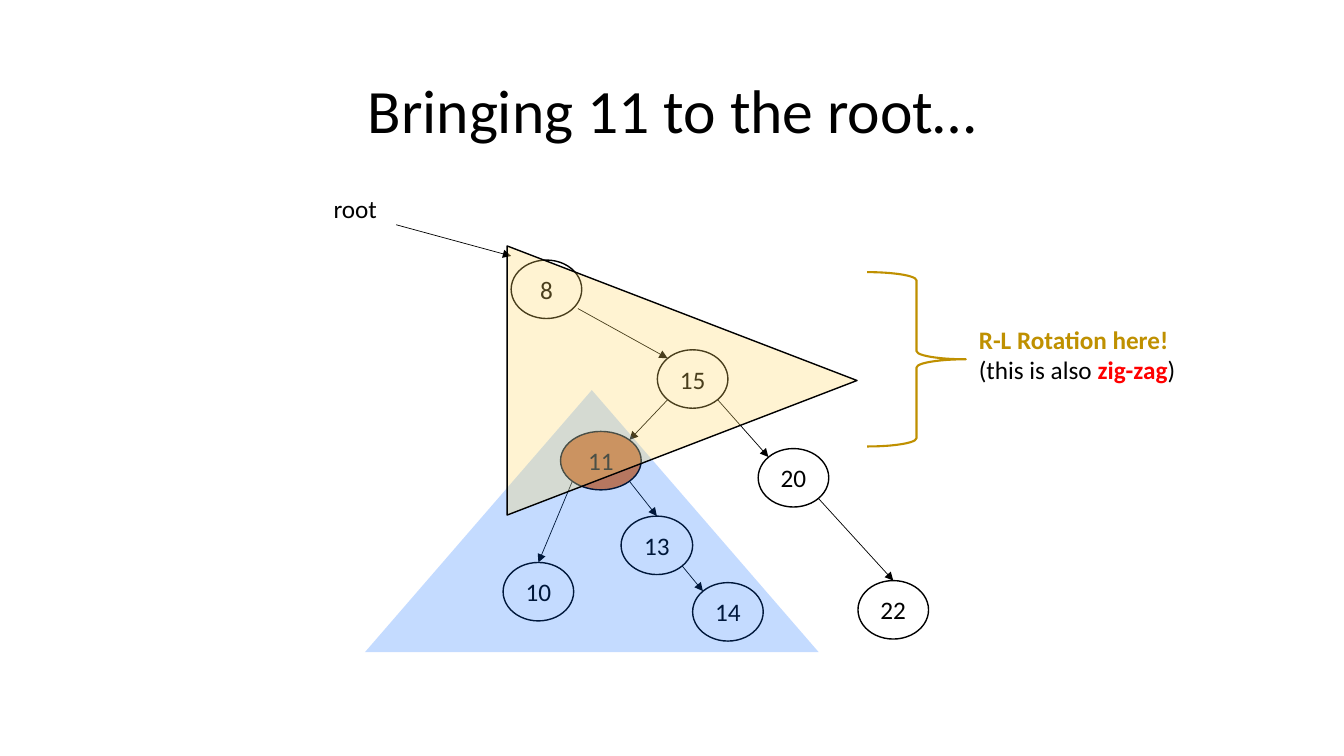
import pptx
import pptx.dml.color
import pptx.enum.shapes
import pptx.enum.text
import pptx.oxml
import pptx.oxml.ns
import pptx.util

Inches = pptx.util.Inches
Pt = pptx.util.Pt
RGBColor = pptx.dml.color.RGBColor
Shape = pptx.enum.shapes.MSO_SHAPE
Align = pptx.enum.text.PP_ALIGN
Anchor = pptx.enum.text.MSO_ANCHOR

BLACK = RGBColor(0x00, 0x00, 0x00)
ORANGE = RGBColor(0xED, 0x7D, 0x31)
BLUE = RGBColor(0x00, 0x66, 0xFF)
YELLOW = RGBColor(0xFF, 0xD9, 0x66)
GOLD = RGBColor(0xBF, 0x90, 0x00)
RED = RGBColor(0xFF, 0x00, 0x00)

NODE_HEIGHT = 0.58
NODES = {  # key: left, top, width, fill
    8: (5.07, 2.58, 0.7, None),
    15: (6.52, 3.47, 0.7, None),
    20: (7.52, 4.45, 0.7, None),
    22: (8.51, 5.76, 0.7, None),
    13: (6.16, 5.12, 0.71, None),
    10: (4.99, 5.58, 0.7, None),
    11: (5.56, 4.28, 0.8, ORANGE),
    14: (6.87, 5.78, 0.7, None),
}

# Points on a node's rim, in half widths and half heights from its centre
DIAGONAL = 0.71
TOP = (0, -1)
UPPER_LEFT = (-DIAGONAL, -DIAGONAL)
UPPER_RIGHT = (DIAGONAL, -DIAGONAL)
LOWER_LEFT = (-DIAGONAL, DIAGONAL)
LOWER_RIGHT = (DIAGONAL, DIAGONAL)
LOWER_FAR_RIGHT = (0.89, 0.66)

EDGES = [  # parent, its rim point, child, its rim point
    (8, LOWER_FAR_RIGHT, 15, UPPER_LEFT),
    (15, LOWER_RIGHT, 20, UPPER_LEFT),
    (20, LOWER_RIGHT, 22, TOP),
    (15, LOWER_LEFT, 11, UPPER_RIGHT),
    (13, LOWER_RIGHT, 14, UPPER_LEFT),
    (11, LOWER_LEFT, 10, TOP),
    (11, LOWER_RIGHT, 13, TOP),
]


def rim_point(key, offset):
    left, top, width, _ = NODES[key]
    return (left + width / 2 * (1 + offset[0]),
            top + NODE_HEIGHT / 2 * (1 + offset[1]))


class TreePage:
    """Draws tree elements on one slide in a shared style."""

    font = "Calibri"
    text_size = 18
    arrow_weight = 0.5

    def __init__(self, page):
        self.page = page

    def fill_text(self, frame, lines, align=Align.LEFT, size=text_size, spacing=1.0):
        """Fill a frame; each line is a list of (text, colour, bold)."""
        for index, line in enumerate(lines):
            para = frame.paragraphs[0] if index == 0 else frame.add_paragraph()
            para.alignment = align
            para.line_spacing = spacing
            for text, color, bold in line:
                span = para.add_run()
                span.text = text
                span.font.color.rgb = color
                formats = {"name": self.font, "size": Pt(size), "bold": bold}
                for name, value in formats.items():
                    setattr(span.font, name, value)

    def text(self, place, lines, anchor=Anchor.TOP, **style):
        box = self.page.shapes.add_textbox(*map(Inches, place))
        box.text_frame.word_wrap = True
        box.text_frame.vertical_anchor = anchor
        self.fill_text(box.text_frame, lines, **style)

    def shape(self, kind, place, fill=None, opacity=100, line=None, weight=1):
        shape = self.page.shapes.add_shape(kind, *map(Inches, place))
        shape.shadow.inherit = False
        if fill is None:
            shape.fill.background()
        else:
            shape.fill.solid()
            shape.fill.fore_color.rgb = fill
            if opacity < 100:
                color = shape._element.spPr.find(
                    pptx.oxml.ns.qn("a:solidFill")).find(pptx.oxml.ns.qn("a:srgbClr"))
                color.append(color.makeelement(pptx.oxml.ns.qn("a:alpha"),
                                               {"val": str(opacity * 1000)}))
        if line is None:
            shape.line.fill.background()
        else:
            shape.line.color.rgb = line
            shape.line.width = Pt(weight)
        return shape

    def node(self, key):
        left, top, width, fill = NODES[key]
        oval = self.shape(Shape.OVAL, (left, top, width, NODE_HEIGHT), fill, line=BLACK)
        formats = {"word_wrap": False, "vertical_anchor": Anchor.MIDDLE}
        for name, value in formats.items():
            setattr(oval.text_frame, name, value)
        self.fill_text(oval.text_frame, [[(str(key), BLACK, False)]], Align.CENTER)

    def arrow(self, start, end):
        arrow = self.page.shapes.add_connector(
            pptx.enum.shapes.MSO_CONNECTOR.STRAIGHT, *map(Inches, (*start, *end)))
        arrow.line.color.rgb = BLACK
        arrow.line.width = Pt(self.arrow_weight)
        properties = arrow._element.spPr
        outline = properties.find(pptx.oxml.ns.qn("a:ln"))
        outline.append(outline.makeelement(pptx.oxml.ns.qn("a:tailEnd"),
                                           {"type": "triangle"}))
        properties.append(properties.makeelement(pptx.oxml.ns.qn("a:effectLst"), {}))


def main():
    deck = pptx.Presentation()
    deck.slide_width = Inches(13.33)
    deck.slide_height = Inches(7.5)
    tree = TreePage(deck.slides.add_slide(deck.slide_layouts[6]))

    tree.text((0.92, 0.4, 11.5, 1.45), [[("Bringing 11 to the root…", BLACK, False)]],
              Anchor.MIDDLE, align=Align.CENTER, size=44, spacing=0.9)

    for key in NODES:
        tree.node(key)
    for parent, leaving, child, arriving in EDGES:
        tree.arrow(rim_point(parent, leaving), rim_point(child, arriving))

    tree.text((3.21, 1.87, 1.08, 0.4), [[("root", BLACK, False)]])
    tree.arrow((3.93, 2.23), (5.07, 2.54))

    tree.shape(Shape.ISOSCELES_TRIANGLE, (3.62, 3.87, 4.5, 2.6), BLUE, 23)
    rotation_area = tree.shape(Shape.ISOSCELES_TRIANGLE, (5.43, 2.04, 2.67, 3.47),
                               YELLOW, 29, BLACK)
    rotation_area.rotation = 90

    tree.shape(Shape.RIGHT_BRACE, (8.6, 2.7, 0.98, 1.73), line=GOLD, weight=1.5)
    tree.text((9.61, 3.17, 2.25, 1.01), [
        [("R-L Rotation here!", GOLD, True)],
        [("(this is also ", BLACK, False), ("zig-zag", RED, True), (")", BLACK, False)],
    ])

    deck.save("out.pptx")


if __name__ == "__main__":
    main()
